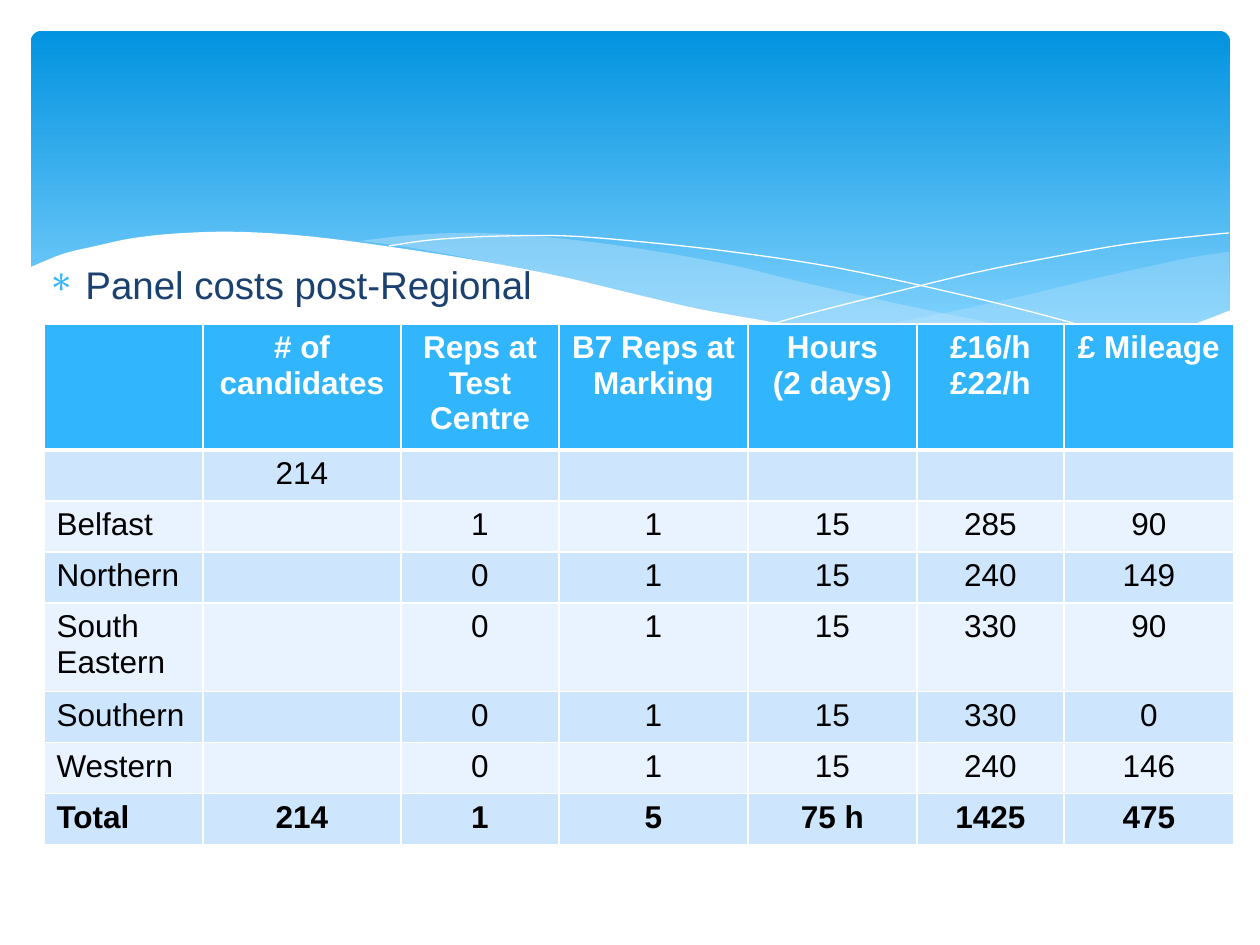
import pptx
import pptx.util
import pptx.dml.color
import pptx.enum.shapes
import pptx.enum.text
import pptx.oxml
import pptx.oxml.ns

RGBColor = pptx.dml.color.RGBColor
ALIGN = pptx.enum.text.PP_ALIGN
WHITE = RGBColor(0xFF, 0xFF, 0xFF)
BLACK = RGBColor(0, 0, 0)
SKY_TOP = RGBColor(0x02, 0x93, 0xE0)
SKY_BOTTOM = RGBColor(0x83, 0xD3, 0xFE)
MIST = RGBColor(0xC6, 0xE7, 0xFC)
NAVY = RGBColor(0x1B, 0x41, 0x71)
ACCENT = RGBColor(0x31, 0xB6, 0xFD)
BAND_DARK = RGBColor(0xCE, 0xE5, 0xFE)
BAND_LIGHT = RGBColor(0xE8, 0xF3, 0xFF)
FONT = "Arial"
PX = 914400 / 126

# Content
HEADING = "Panel costs post-Regional"
ROWS = [
    ["", "# of candidates", "Reps at Test Centre", "B7 Reps at Marking",
     "Hours\n(2 days)", "£16/h\n£22/h", "£ Mileage"],
    ["", "214", "", "", "", "", ""],
    ["Belfast", "", "1", "1", "15", "285", "90"],
    ["Northern", "", "0", "1", "15", "240", "149"],
    ["South Eastern", "", "0", "1", "15", "330", "90"],
    ["Southern", "", "0", "1", "15", "330", "0"],
    ["Western", "", "0", "1", "15", "240", "146"],
    ["Total", "214", "1", "5", "75 h", "1425", "475"],
]
COLUMN_WIDTHS = [159, 198, 158, 189, 169, 147, 170]
ROW_HEIGHT = 51

# Each wave is a list of smooth edges, joined end to end
RIGHT_CREST = [
    [(1229, 252), (1194, 257), (1142, 268), (1085, 281), (1014, 298), (949, 312),
     (889, 324), (833, 334)],
    [(833, 334), (888, 341), (938, 346), (984, 349), (1026, 350), (1063, 348),
     (1099, 345), (1130, 340), (1160, 334), (1187, 326), (1213, 318), (1230, 311)],
]
MIDDLE_WAVE = [
    [(360, 241), (413, 235), (479, 233), (557, 238), (648, 250), (736, 266),
     (793, 280), (890, 302), (977, 320), (1055, 334), (1125, 344)],
    [(1125, 344), (1080, 349), (1031, 350), (973, 349), (910, 345), (838, 335),
     (757, 322), (668, 302), (566, 280), (483, 261), (407, 247), (360, 241)],
]
FRONT_WAVE = [
    [(29, 268), (45, 261), (66, 253), (96, 246), (134, 238), (184, 233), (243, 232),
     (315, 237), (398, 248), (493, 268), (563, 277), (634, 294), (699, 309),
     (760, 320), (816, 330), (867, 338), (915, 343), (959, 346), (1019, 349),
     (1071, 346), (1118, 341), (1159, 334), (1197, 323), (1231, 310)],
    [(1231, 415), (29, 415)],
]
FRONT_WAVE[0][9:11] = [(486, 262), (563, 277)]
FALLING_LINE = [[(389, 246), (422, 241), (457, 238), (505, 236), (567, 236), (643, 242),
                 (733, 252), (838, 268), (958, 294), (1047, 316), (1143, 343)]]
RISING_LINE = [[(772, 324), (823, 310), (907, 289), (978, 272), (1053, 257),
                (1128, 244), (1198, 236), (1229, 233)]]
# edges, fill colour (None for a line), opacity in percent
WAVES = [
    (RIGHT_CREST, MIST, 29),
    (MIDDLE_WAVE, MIST, 40),
    (FALLING_LINE, None, 100),
    (RISING_LINE, None, 100),
    (FRONT_WAVE, WHITE, 100),
]


def px(length):
    return pptx.util.Emu(round(length * PX))


def smooth_edge(points, steps=5):
    """Catmull-Rom curve through the points."""
    padded = [points[0], *points, points[-1]]
    curve = [points[0]]
    for a, b, c, d in zip(padded, padded[1:], padded[2:], padded[3:]):
        for step in range(1, steps + 1):
            t = step / steps
            curve.append(tuple(
                (2 * q + (r - p) * t + (2 * p - 5 * q + 4 * r - s) * t ** 2
                 + (3 * q - p - 3 * r + s) * t ** 3) / 2
                for p, q, r, s in zip(a, b, c, d)))
    return curve


def add_xml(parent, tag, attributes="", content=""):
    parent.append(pptx.oxml.parse_xml(
        f'<a:{tag} {pptx.oxml.ns.nsdecls("a")} {attributes}>{content}</a:{tag}>'))


def add_wave(shapes, edges, color, opacity):
    points = [(x * PX, y * PX) for edge in edges for x, y in smooth_edge(edge)]
    builder = shapes.build_freeform(*points[0], scale=1.0)
    builder.add_line_segments(points[1:], close=color is not None)
    shape = builder.convert_to_shape()
    shape.shadow.inherit = False
    if color is None:
        shape.fill.background()
        shape.line.color.rgb = WHITE
        shape.line.width = 0
        return
    shape.fill.solid()
    shape.fill.fore_color.rgb = color
    shape.line.fill.background()
    if opacity < 100:
        color_element = shape.fill._xPr.find(".//" + pptx.oxml.ns.qn("a:srgbClr"))
        add_xml(color_element, "alpha", f'val="{opacity * 1000}"')


def add_text(paragraph, text, size, color, bold=False):
    run = paragraph.add_run()
    run.text = text
    run.font.name = FONT
    run.font.size = pptx.util.Pt(size)
    run.font.bold = bold
    run.font.color.rgb = color


def fill_cell(cell, text, row, column):
    header = row == 0
    properties = cell._tc.get_or_add_tcPr()
    for side in "LRTB":
        thick = (header and side == "B") or (row == 1 and side == "T")
        add_xml(properties, f"ln{side}", f'w="{pptx.util.Pt(3 if thick else 1)}"',
                f'<a:solidFill><a:srgbClr val="{WHITE}"/></a:solidFill>')
    cell.fill.solid()
    cell.fill.fore_color.rgb = ACCENT if header else (BAND_DARK if row % 2 else BAND_LIGHT)
    for index, line in enumerate(text.split("\n") if text else []):
        frame = cell.text_frame
        paragraph = frame.add_paragraph() if index else frame.paragraphs[0]
        paragraph.alignment = ALIGN.CENTER if column else ALIGN.LEFT
        add_text(paragraph, line, 18, WHITE if header else BLACK,
                 bold=header or row == len(ROWS) - 1)


def main():
    presentation = pptx.Presentation()
    presentation.slide_width, presentation.slide_height = px(1260), px(945)
    slide = presentation.slides.add_slide(presentation.slide_layouts[6])
    shapes = slide.shapes

    # Sky panel
    sky = shapes.add_shape(pptx.enum.shapes.MSO_SHAPE.ROUNDED_RECTANGLE,
                           px(31), px(31), px(1199), px(340))
    sky.adjustments[0] = 0.03
    sky.shadow.inherit = False
    sky.line.fill.background()
    sky.fill.gradient()
    sky.fill.gradient_angle = 270
    for stop, color, position in zip(sky.fill.gradient_stops,
                                     (SKY_TOP, SKY_BOTTOM), (0, 0.9)):
        stop.color.rgb = color
        stop.position = position

    # Waves
    for wave in WAVES:
        add_wave(shapes, *wave)

    # Bulleted heading
    body = shapes.add_textbox(px(35), px(255), px(1191), px(659))
    body.text_frame.word_wrap = True
    paragraph = body.text_frame.paragraphs[0]
    paragraph.space_before = pptx.util.Pt(3)
    properties = paragraph._p.get_or_add_pPr()
    properties.set("marL", str(px(38)))
    properties.set("indent", str(px(-38)))
    add_xml(properties, "buClr", content=f'<a:srgbClr val="{ACCENT}"/>')
    add_xml(properties, "buChar", 'char="∗"')
    add_text(paragraph, HEADING, 22, NAVY)

    # Cost table
    table = shapes.add_table(len(ROWS), len(COLUMN_WIDTHS), px(44), px(324),
                             px(sum(COLUMN_WIDTHS)), px(ROW_HEIGHT * len(ROWS))).table
    table.first_row = table.horz_banding = False
    for column, width in zip(table.columns, COLUMN_WIDTHS):
        column.width = px(width)
    for row, texts in enumerate(ROWS):
        table.rows[row].height = px(ROW_HEIGHT)
        for column, text in enumerate(texts):
            fill_cell(table.cell(row, column), text, row, column)

    presentation.save("out.pptx")


if __name__ == "__main__":
    main()
